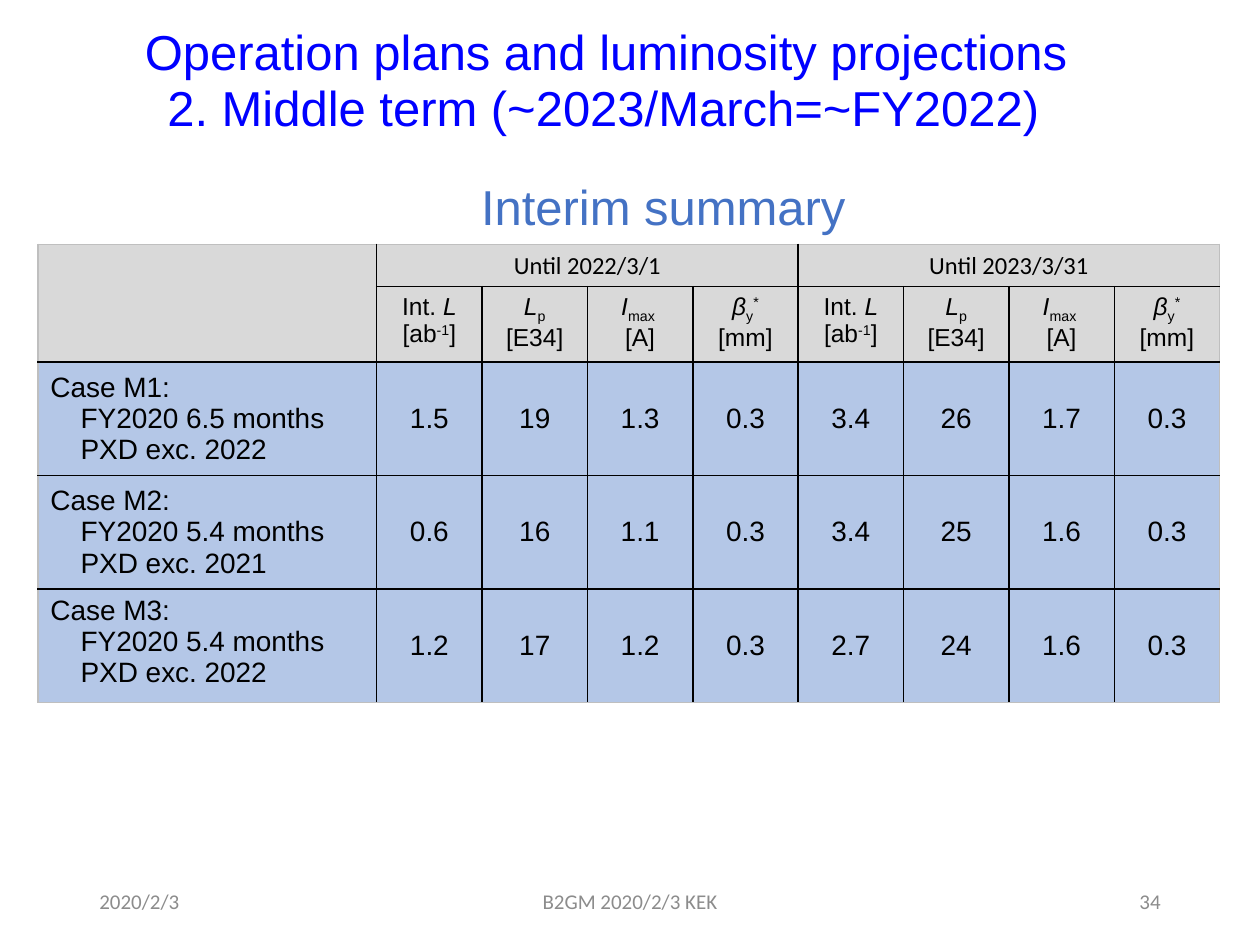
from lxml.etree import SubElement
from pptx import Presentation
from pptx.dml.color import RGBColor
from pptx.enum.text import MSO_ANCHOR, PP_ALIGN
from pptx.oxml.ns import qn
from pptx.util import Inches, Pt

BLUE = RGBColor(0x00, 0x00, 0xFF)
STEEL = RGBColor(0x44, 0x72, 0xC4)
GRAY = RGBColor(0x8C, 0x8C, 0x8C)
BLACK = RGBColor(0x00, 0x00, 0x00)
EDGE = RGBColor(0xBF, 0xBF, 0xBF)
HEAD = RGBColor(0xD9, 0xD9, 0xD9)
BODY = RGBColor(0xB4, 0xC7, 0xE7)

BIG = {"name": "Arial", "size": Pt(28)}
SMALL = {"name": "Calibri", "size": Pt(12)}
SPAN = {"name": "Calibri", "size": Pt(14)}
UNIT = {"name": "Arial", "size": Pt(14)}
CASE = {"name": "Arial", "size": Pt(16)}

SUB, SUPER = -25000, 30000
UNITS = [
    [[("Int. ", False, 0), ("L", True, 0), (" [ab", False, 0), ("-1", False, SUPER), ("]", False, 0)]],
    [[("L", True, 0), ("p", False, SUB), (" [E34]", False, 0)]],
    [[("I", True, 0), ("max ", False, SUB)], [("[A]", False, 0)]],
    [[("β", True, 0), ("y", False, SUB), ("*", False, SUPER), (" [mm]", False, 0)]],
]
CASES = [
    (["Case M1:", "FY2020 6.5 months", "PXD exc. 2022"], "1.5 19 1.3 0.3 3.4 26 1.7 0.3"),
    (["Case M2:", "FY2020 5.4 months", "PXD exc. 2021"], "0.6 16 1.1 0.3 3.4 25 1.6 0.3"),
    (["Case M3:", "FY2020 5.4 months", "PXD exc. 2022"], "1.2 17 1.2 0.3 2.7 24 1.6 0.3"),
]


def style(font, form, color=BLACK):
    """Apply format values and a colour to a font."""
    for key, value in form.items():
        setattr(font, key, value)
    font.color.rgb = color


def write(frame, lines, form, color=BLACK, align=PP_ALIGN.LEFT):
    """Fill a text frame with lines, each a list of (text, italic, baseline)."""
    for i, line in enumerate(lines):
        para = frame.add_paragraph() if i else frame.paragraphs[0]
        para.alignment = align
        for text, slant, base in line:
            run = para.add_run()
            run.text = text
            style(run.font, form, color)
            if slant:
                run.font.italic = True
            if base:
                run._r.get_or_add_rPr().set("baseline", str(base))


def plain(text):
    """Return one line holding one plain run."""
    return [(text, False, 0)]


def label(slide, box, text, form, color, align=PP_ALIGN.LEFT, anchor=MSO_ANCHOR.TOP):
    """Add a text box of one line."""
    frame = slide.shapes.add_textbox(*map(Inches, box)).text_frame
    frame.word_wrap = True
    frame.vertical_anchor = anchor
    write(frame, [plain(text)], form, color, align)


def heading(slide, box):
    """Place the title, its second line and the table caption."""
    left, top, width, height = box
    title = slide.shapes.title
    spots = {"left": left, "top": top, "width": width, "height": height}
    for key, value in spots.items():
        setattr(title, key, Inches(value))
    title.text_frame.vertical_anchor = MSO_ANCHOR.TOP
    write(title.text_frame, [plain("Operation plans and luminosity projections")], BIG, BLUE)
    label(slide, (left + 0.18, top + 0.45, 7.27, height),
          "2. Middle term (~2023/March=~FY2022)", BIG, BLUE)
    label(slide, (left + 2.67, top + 1.23, 3.4, height), "Interim summary", BIG, STEEL)


def border(cell, row, col, rows, cols):
    """Draw grey lines on the table's rim and black lines inside."""
    rims = {
        "a:lnL": col == 0,
        "a:lnR": col + cell.span_width >= cols,
        "a:lnT": row == 0,
        "a:lnB": row + cell.span_height >= rows,
    }
    props = cell._tc.get_or_add_tcPr()
    for tag, rim in rims.items():
        line = SubElement(props, qn(tag), w=str(Pt(1)))
        fill = SubElement(line, qn("a:solidFill"))
        SubElement(fill, qn("a:srgbClr"), val=str(EDGE if rim else BLACK))


def summary(slide, box):
    """Place the table of cases by date."""
    rows, cols = len(CASES) + 2, 2 * len(UNITS) + 1
    table = slide.shapes.add_table(rows, cols, *map(Inches, box)).table
    first = 2.69
    for i, col in enumerate(table.columns):
        col.width = Inches((box[2] - first) / (cols - 1) if i else first)
    for row, height in zip(table.rows, [0.33, 0.6] + [0.9] * len(CASES)):
        row.height = Inches(height)

    table.cell(0, 0).merge(table.cell(1, 0))
    for i, text in enumerate(["Until 2022/3/1", "Until 2023/3/31"]):
        start = 1 + i * len(UNITS)
        cell = table.cell(0, start)
        cell.merge(table.cell(0, start + len(UNITS) - 1))
        write(cell.text_frame, [plain(text)], SPAN, align=PP_ALIGN.CENTER)
        for j, lines in enumerate(UNITS):
            write(table.cell(1, start + j).text_frame, lines, UNIT, align=PP_ALIGN.CENTER)

    for i, (lines, values) in enumerate(CASES, 2):
        cell = table.cell(i, 0)
        write(cell.text_frame, map(plain, lines), CASE)
        cell.vertical_anchor = MSO_ANCHOR.TOP if i == rows - 1 else MSO_ANCHOR.MIDDLE
        for para in cell.text_frame.paragraphs[1:]:
            para._p.get_or_add_pPr().set("marL", str(Inches(0.24)))
        for j, value in enumerate(values.split(), 1):
            cell = table.cell(i, j)
            write(cell.text_frame, [plain(value)], CASE, align=PP_ALIGN.CENTER)
            cell.vertical_anchor = MSO_ANCHOR.MIDDLE

    for i in range(rows):
        for j in range(cols):
            cell = table.cell(i, j)
            if not cell.is_spanned:
                border(cell, i, j, rows, cols)
            cell.fill.solid()
            cell.fill.fore_color.rgb = HEAD if i < 2 else BODY


def footer(slide, box):
    """Place the date, the event and the page number."""
    left, top, width, height = box
    side, mid = 2.25, 3.38
    parts = [
        (left, side, "2020/2/3", PP_ALIGN.LEFT),
        (left + (width - mid) / 2, mid, "B2GM 2020/2/3 KEK", PP_ALIGN.CENTER),
        (left + width - side, side, "34", PP_ALIGN.RIGHT),
    ]
    for x, wide, text, align in parts:
        label(slide, (x, top, wide, height), text, SMALL, GRAY, align, MSO_ANCHOR.MIDDLE)


def main():
    """Build and save the slide."""
    deck = Presentation()
    deck.slide_width, deck.slide_height = Inches(10), Inches(7.5)
    slide = deck.slides.add_slide(deck.slide_layouts[5])
    heading(slide, (1.05, 0.12, 7.65, 0.57))
    summary(slide, (0.3, 1.94, 9.38, 3.63))
    footer(slide, (0.69, 6.95, 8.62, 0.4))
    deck.save("out.pptx")


if __name__ == "__main__":
    main()
